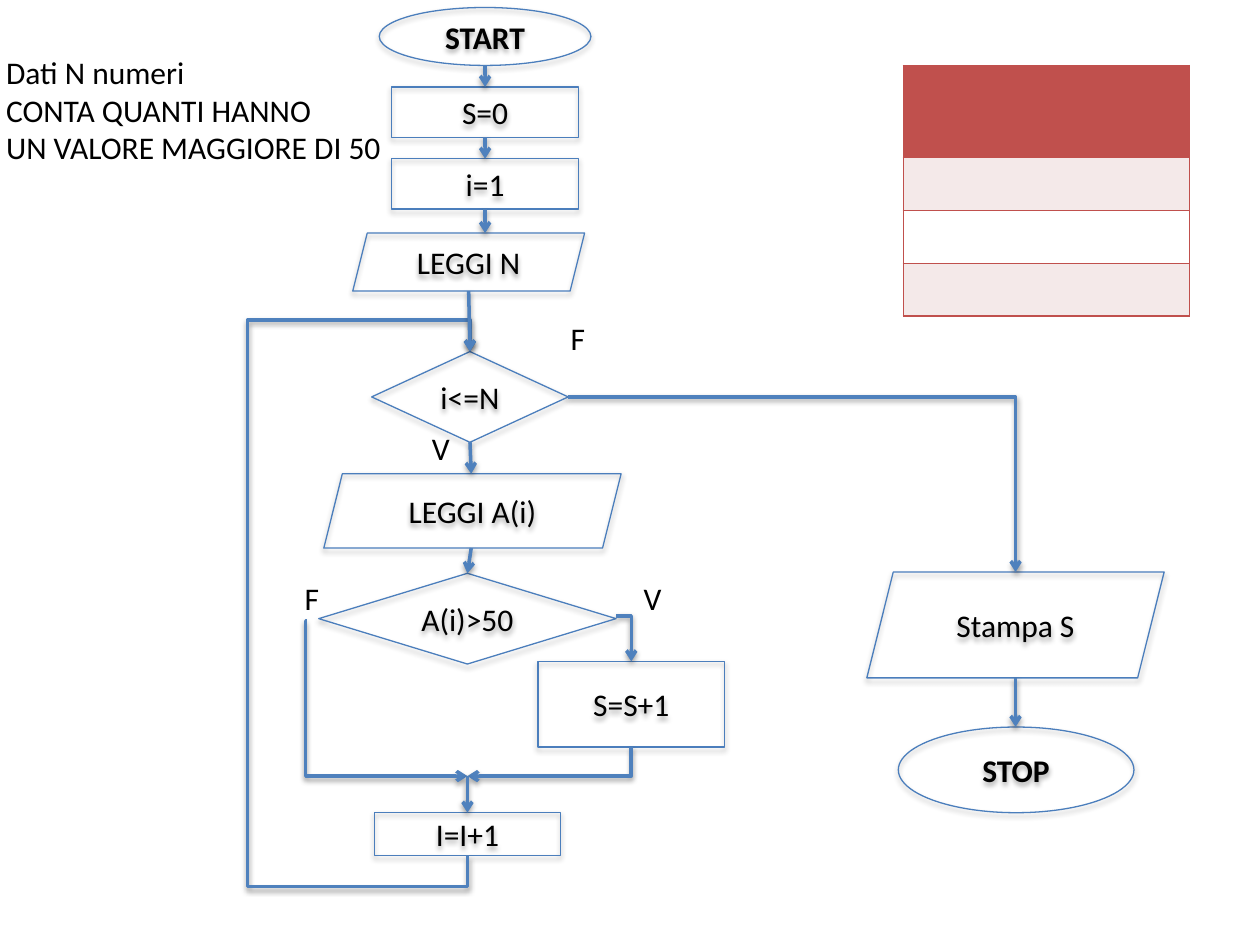
from lxml import etree
from pptx import Presentation
from pptx import util as u
from pptx.dml.color import RGBColor
from pptx.enum import shapes, text
from pptx.oxml import ns

COLORS = {
    "ink": "000000",
    "outline": "4B7EBC",
    "flow": "4F81BD",
    "table": "C0504D",
    "band": "F4E9E9",
    "plain": "FFFFFF",
}
KIND = shapes.MSO_SHAPE
TOP, BOTTOM = 0, 2
NO_TABLE_STYLE = "{2D5ABB26-0587-4C30-8999-92F81FD0307C}"

# Flowchart blocks: key, shape, text, (left, top, width, height)
BLOCKS = [
    ("start", KIND.OVAL, "START", (3.01, 0.06, 1.68, 0.46)),
    ("stop", KIND.OVAL, "STOP", (7.13, 5.77, 1.87, 0.68)),
    ("loop test", KIND.DIAMOND, "i<=N", (2.95, 2.79, 1.56, 0.72)),
    ("read item", KIND.PARALLELOGRAM, "LEGGI A(i)", (2.57, 3.76, 2.36, 0.59)),
    ("zero count", KIND.RECTANGLE, "S=0", (3.11, 0.69, 1.48, 0.4)),
    ("first index", KIND.RECTANGLE, "i=1", (3.11, 1.26, 1.48, 0.4)),
    ("read size", KIND.PARALLELOGRAM, "LEGGI N", (2.8, 1.85, 1.84, 0.46)),
    ("value test", KIND.DIAMOND, "A(i)>50", (2.53, 4.55, 2.36, 0.72)),
    ("add count", KIND.RECTANGLE, "S=S+1", (4.27, 5.25, 1.48, 0.68)),
    ("next index", KIND.RECTANGLE, "I=I+1", (2.97, 6.45, 1.48, 0.34)),
    ("print", KIND.PARALLELOGRAM, "Stampa S", (6.88, 4.54, 2.36, 0.84)),
]

# Free texts: lines, (left, top, width, height)
LABELS = [
    ("Dati N numeri\nCONTA QUANTI HANNO\nUN VALORE MAGGIORE DI 50",
     (-0.05, 0.37, 3.21, 1.01)),
    ("F", (4.43, 2.48, 0.32, 0.4)),
    ("V", (3.33, 3.36, 0.35, 0.4)),
    ("F", (2.32, 4.55, 0.32, 0.4)),
    ("V", (5.01, 4.55, 0.35, 0.4)),
]

# Straight arrows: from, to, block joined at its bottom, block joined at its top
ARROWS = [
    ((3.85, 0.52), (3.85, 0.69), None, "zero count"),
    ((3.85, 1.09), (3.85, 1.26), "zero count", "first index"),
    ((3.85, 1.66), (3.85, 1.85), "first index", None),
    ((3.72, 2.31), (3.73, 2.79), None, "loop test"),
    ((3.73, 3.52), (3.74, 3.76), "loop test", None),
    ((3.74, 4.35), (3.71, 4.55), None, "value test"),
    ((3.71, 6.16), (3.71, 6.45), None, "next index"),
    ((8.06, 5.38), (8.06, 5.77), None, None),
]

# Bent arrows: from, to, number of segments, starts vertically, bend ratios
BENDS = [
    ((4.89, 4.89), (5.01, 5.25), 2, False, ()),
    ((2.43, 4.93), (3.71, 6.16), 3, False, (-0.003,)),
    ((5.01, 5.93), (3.71, 6.16), 2, True, ()),
    ((3.71, 6.79), (3.73, 2.79), 5, True, (-0.062, -87, 1.062)),
    ((4.51, 3.15), (8.06, 4.54), 2, False, ()),
]


def rgb(name):
    return RGBColor.from_string(COLORS[name])


def child(parent, tag, **attributes):
    element = etree.SubElement(parent, ns.qn(tag))
    for key, value in attributes.items():
        element.set(key, str(value))
    return element


def write(frame, words, align=text.PP_ALIGN.LEFT, bold=False, size=18):
    for number, line in enumerate(words.split("\n")):
        paragraph = frame.add_paragraph() if number else frame.paragraphs[0]
        paragraph.alignment = align
        run = paragraph.add_run()
        run.text = line
        run.font.name = "Calibri"
        run.font.size = u.Pt(size)
        run.font.bold = bold
        run.font.color.rgb = rgb("ink")


def add_shadow(effects, distance, opacity):
    shadow = child(effects, "a:outerShdw", blurRad=u.Pt(3.1), dist=u.Pt(distance),
                   dir=90 * 60000, rotWithShape=0)
    color = child(shadow, "a:srgbClr", val=COLORS["ink"])
    child(color, "a:alpha", val=opacity * 1000)


def add_block(slide, kind, words, box):
    block = slide.shapes.add_shape(kind, *map(u.Inches, box))
    block.fill.background()
    block.line.color.rgb = rgb("outline")
    block.line.width = u.Pt(0.75)
    block.shadow.inherit = False
    add_shadow(block._element.spPr.find(ns.qn("a:effectLst")), 1.8, 35)
    block.text_frame.vertical_anchor = text.MSO_ANCHOR.MIDDLE
    write(block.text_frame, words, align=text.PP_ALIGN.CENTER, bold=kind == KIND.OVAL)
    return block


def add_label(slide, words, box):
    frame = slide.shapes.add_textbox(*map(u.Inches, box)).text_frame
    frame.word_wrap = False
    frame.auto_size = text.MSO_AUTO_SIZE.SHAPE_TO_FIT_TEXT
    write(frame, words)


def add_arrow(slide, start, end, kind=shapes.MSO_CONNECTOR.STRAIGHT):
    arrow = slide.shapes.add_connector(kind, *map(u.Inches, (*start, *end)))
    arrow.line.color.rgb = rgb("flow")
    arrow.line.width = u.Pt(2)
    properties = arrow._element.spPr
    child(properties.find(ns.qn("a:ln")), "a:tailEnd", type="arrow")
    add_shadow(child(properties, "a:effectLst"), 1.6, 38)
    return arrow


def add_bend(slide, start, end, segments, vertical, ratios):
    if vertical:
        # A quarter turn about the centre makes the first segment vertical
        middle_x, middle_y = (start[0] + end[0]) / 2, (start[1] + end[1]) / 2
        half_run, half_rise = (end[1] - start[1]) / 2, (start[0] - end[0]) / 2
        start = (middle_x - half_run, middle_y - half_rise)
        end = (middle_x + half_run, middle_y + half_rise)
    bend = add_arrow(slide, start, end, shapes.MSO_CONNECTOR.ELBOW)
    properties = bend._element.spPr
    if vertical:
        properties.find(ns.qn("a:xfrm")).set("rot", str(90 * 60000))
    geometry = properties.find(ns.qn("a:prstGeom"))
    geometry.set("prst", f"bentConnector{segments}")
    guides = geometry.find(ns.qn("a:avLst"))
    for number, ratio in enumerate(ratios, 1):
        child(guides, "a:gd", name=f"adj{number}", fmla=f"val {round(ratio * 100000)}")


def add_border(cell, side):
    line = child(cell._tc.get_or_add_tcPr(), f"a:ln{side}", w=u.Pt(1))
    child(child(line, "a:solidFill"), "a:srgbClr", val=COLORS["table"])


def add_empty_table(slide):
    fills = ["table", "band", "plain", "band"]
    columns = 3
    box = map(u.Inches, (7.17, 0.52, 2.27, 2.01))
    table = slide.shapes.add_table(len(fills), columns, *box).table
    table.first_row = table.horz_banding = False
    table._tbl.tblPr.find(ns.qn("a:tableStyleId")).text = NO_TABLE_STYLE
    for row, fill in enumerate(fills):
        table.rows[row].height = u.Inches(0.42 if row else 0.73)
        for column in range(columns):
            cell = table.cell(row, column)
            outer = {0: "L", columns - 1: "R"}.get(column, "")
            for side in outer + "TB":
                add_border(cell, side)
            cell.fill.solid()
            cell.fill.fore_color.rgb = rgb(fill)


def main():
    deck = Presentation()
    deck.slide_width, deck.slide_height = u.Inches(10), u.Inches(7.5)
    slide = deck.slides.add_slide(deck.slide_layouts[6])

    # Flowchart
    blocks = {key: add_block(slide, *details) for key, *details in BLOCKS}
    for bend in BENDS:
        add_bend(slide, *bend)
    for start, end, source, target in ARROWS:
        arrow = add_arrow(slide, start, end)
        if source:
            arrow.begin_connect(blocks[source], BOTTOM)
        if target:
            arrow.end_connect(blocks[target], TOP)

    # Problem statement and branch labels
    for label in LABELS:
        add_label(slide, *label)

    # Empty table
    add_empty_table(slide)
    deck.save("out.pptx")


if __name__ == "__main__":
    main()
